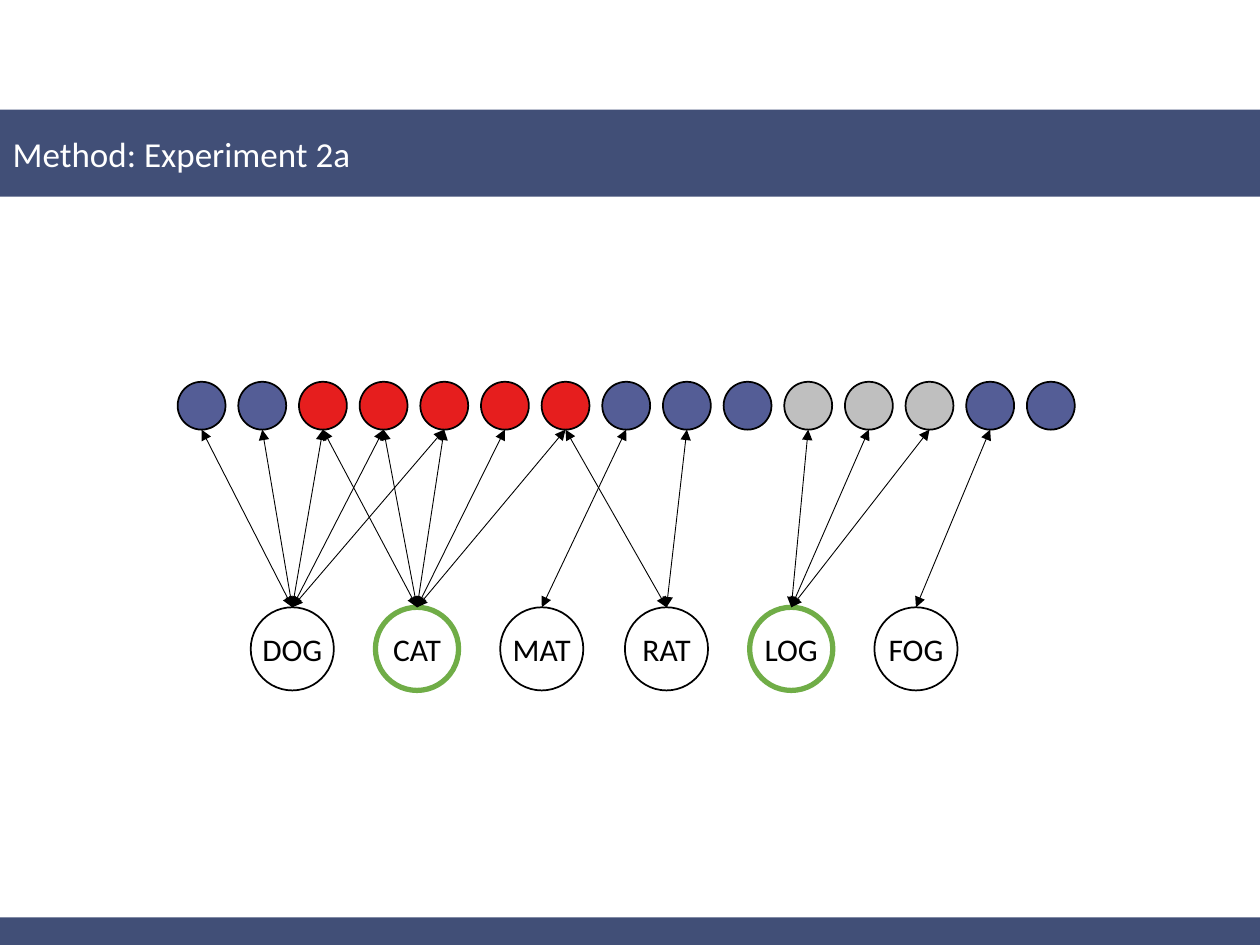
from dataclasses import dataclass

from lxml import etree
from pptx import Presentation
from pptx import util as u
from pptx.dml.color import RGBColor
from pptx.enum import shapes, text
from pptx.oxml import ns


@dataclass(frozen=True)
class Theme:
    font: str = "Calibri"
    title_size: float = 20
    word_size: float = 18
    bar: str = "414F77"
    white: str = "FFFFFF"
    black: str = "000000"
    blue: str = "545D96"
    red: str = "E61E1E"
    grey: str = "BFBFBF"
    green: str = "70AD47"


@dataclass(frozen=True)
class Word:
    label: str
    label_width: float
    features: tuple[int, ...]
    highlighted: bool = False


THEME = Theme()

WORDS = [
    Word("DOG", 0.68, (0, 1, 2, 3, 4)),
    Word("CAT", 0.59, (2, 3, 4, 5, 6), highlighted=True),
    Word("MAT", 0.67, (7,)),
    Word("RAT", 0.59, (6, 8)),
    Word("LOG", 0.63, (10, 11, 12), highlighted=True),
    Word("FOG", 0.64, (13,)),
]
FEATURE_COLORS = (
    [THEME.blue] * 2 + [THEME.red] * 5 + [THEME.blue] * 3
    + [THEME.grey] * 3 + [THEME.blue] * 2
)

WORD_LEFT, WORD_TOP, WORD_SIZE, WORD_STEP = 1.99, 4.82, 0.66, 0.99
LABEL_TOP, LABEL_HEIGHT = 4.95, 0.4
FEATURE_LEFT, FEATURE_TOP, FEATURE_SIZE = 1.41, 3.03, 0.38
FEATURE_STEP = (8.15 - FEATURE_LEFT) / (len(FEATURE_COLORS) - 1)


def apply_format(target, values: dict) -> None:
    for name, value in values.items():
        setattr(target, name, value)


def place(shape, left: float, top: float, width: float, height: float) -> None:
    apply_format(shape, {
        "left": u.Inches(left), "top": u.Inches(top),
        "width": u.Inches(width), "height": u.Inches(height),
    })


def fill_shape(shape, color: str) -> None:
    shape.fill.solid()
    shape.fill.fore_color.rgb = RGBColor.from_string(color)


def write_text(shape, content: str, size: float, color: str, alignment, frame_format: dict) -> None:
    apply_format(shape.text_frame, frame_format)
    paragraph = shape.text_frame.paragraphs[0]
    paragraph.alignment = alignment
    run = paragraph.add_run()
    run.text = content
    apply_format(run.font, {"name": THEME.font, "size": u.Pt(size)})
    run.font.color.rgb = RGBColor.from_string(color)


def add_circle(parent, left: float, top: float, size: float, fill: str,
               line: str = THEME.black, line_width: float = 1):
    circle = parent.add_shape(
        shapes.MSO_SHAPE.OVAL, u.Inches(left), u.Inches(top), u.Inches(size), u.Inches(size))
    circle.shadow.inherit = False
    fill_shape(circle, fill)
    circle.line.color.rgb = RGBColor.from_string(line)
    circle.line.width = u.Pt(line_width)
    return circle


def add_word(slide, word: Word, left: float):
    """Draw a circle grouped with its label and return the circle."""
    group = slide.shapes.add_group_shape()
    outline = (THEME.green, 3) if word.highlighted else (THEME.black, 1)
    circle = add_circle(group.shapes, left, WORD_TOP, WORD_SIZE, THEME.white, *outline)
    label_left = left + (WORD_SIZE - word.label_width) / 2
    label = group.shapes.add_textbox(
        u.Inches(label_left), u.Inches(LABEL_TOP),
        u.Inches(word.label_width), u.Inches(LABEL_HEIGHT))
    write_text(label, word.label, THEME.word_size, THEME.black, text.PP_ALIGN.CENTER, {
        "word_wrap": False, "auto_size": text.MSO_AUTO_SIZE.SHAPE_TO_FIT_TEXT,
    })
    return circle


def add_double_arrow(slide, word_circle, feature_circle) -> None:
    """Link the top of a word to the bottom of a feature."""
    connector = slide.shapes.add_connector(
        shapes.MSO_CONNECTOR.STRAIGHT,
        word_circle.left + word_circle.width // 2, word_circle.top,
        feature_circle.left + feature_circle.width // 2,
        feature_circle.top + feature_circle.height)
    connector.begin_connect(word_circle, 0)
    connector.line.color.rgb = RGBColor.from_string(THEME.black)
    connector.line.width = u.Pt(0.5)
    properties = connector._element.spPr
    line = properties.find(ns.qn("a:ln"))
    for end in ("a:headEnd", "a:tailEnd"):
        etree.SubElement(line, ns.qn(end), type="triangle")
    etree.SubElement(properties, ns.qn("a:effectLst"))


def add_title(slide) -> None:
    title = slide.shapes.title
    place(title, 0, 0.87, 10, 0.69)
    fill_shape(title, THEME.bar)
    write_text(title, "Method: Experiment 2a", THEME.title_size, THEME.white, text.PP_ALIGN.LEFT, {
        "vertical_anchor": text.MSO_ANCHOR.MIDDLE, "auto_size": text.MSO_AUTO_SIZE.NONE,
    })


def add_footer_bar(slide) -> None:
    bar = slide.shapes.add_shape(shapes.MSO_SHAPE.RECTANGLE, 0, 0, 0, 0)
    place(bar, 0, 7.28, 10, 0.22)
    bar.shadow.inherit = False
    fill_shape(bar, THEME.bar)
    bar.line.fill.background()


def main() -> None:
    presentation = Presentation()
    apply_format(presentation, {"slide_width": u.Inches(10), "slide_height": u.Inches(7.5)})
    slide = presentation.slides.add_slide(presentation.slide_layouts.get_by_name("Title Only"))

    add_footer_bar(slide)
    add_title(slide)
    word_circles = [
        add_word(slide, word, WORD_LEFT + index * WORD_STEP)
        for index, word in enumerate(WORDS)
    ]
    feature_circles = [
        add_circle(slide.shapes, FEATURE_LEFT + index * FEATURE_STEP, FEATURE_TOP,
                   FEATURE_SIZE, color)
        for index, color in enumerate(FEATURE_COLORS)
    ]
    for word, word_circle in zip(WORDS, word_circles):
        for feature in word.features:
            add_double_arrow(slide, word_circle, feature_circles[feature])

    presentation.save("out.pptx")


if __name__ == "__main__":
    main()
